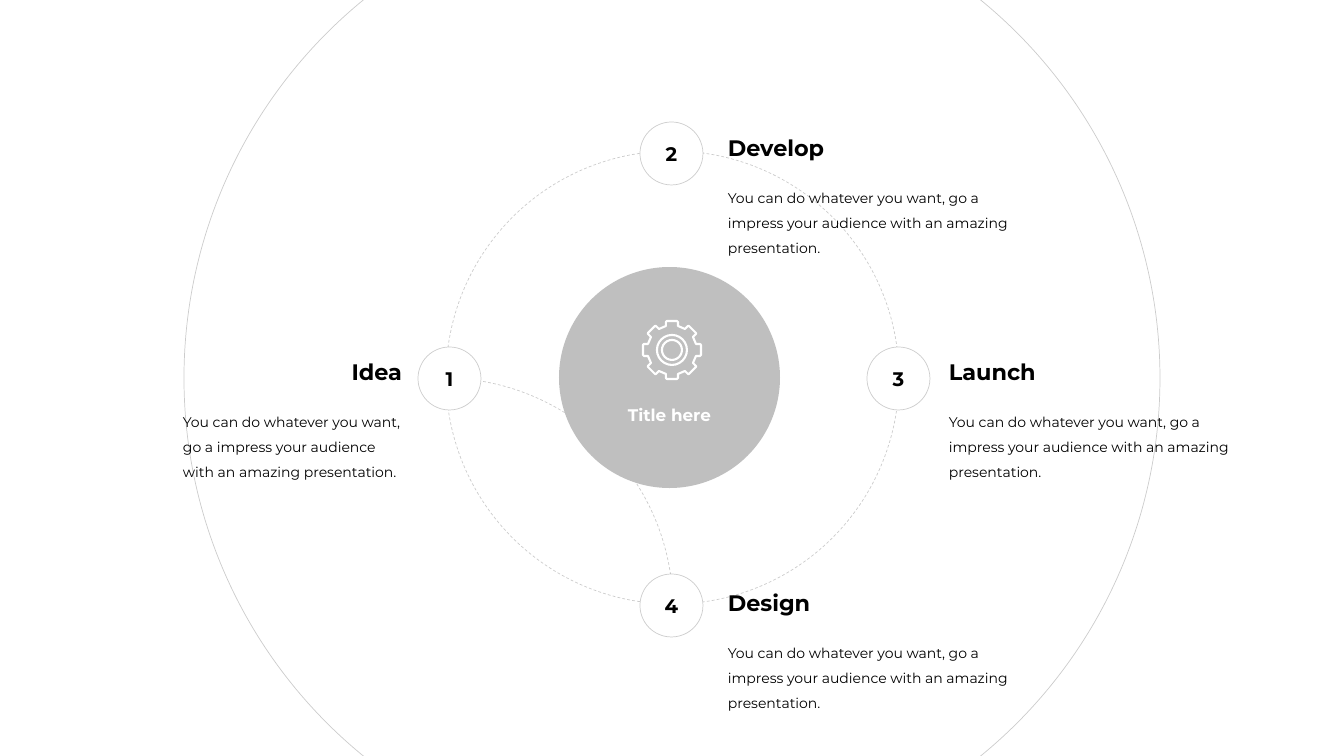
from collections import namedtuple
from dataclasses import dataclass
from math import cos, radians, sin

from lxml import etree
from pptx import Presentation
from pptx import util as u
from pptx.dml.color import RGBColor
from pptx.enum import dml, shapes, text
from pptx.oxml.ns import qn

PX = u.Inches(1) / 100.8

Box = namedtuple("Box", "left top width height")
Step = namedtuple("Step", "number heading heading_width badge words align")


@dataclass(frozen=True)
class Theme:
    font: str = "Montserrat"
    ink: RGBColor = RGBColor(0, 0, 0)
    paper: RGBColor = RGBColor(255, 255, 255)
    hub: RGBColor = RGBColor(191, 191, 191)
    line_opacity: int = 20
    hairline: float = 0.5
    icon_line: float = 1.5
    heading_size: int = 16
    number_size: int = 14
    hub_size: int = 12
    body_size: int = 10


THEME = Theme()
DESCRIPTION = ("You can do whatever you want, go a impress your audience "
               "with an amazing presentation.")
BADGE = 63
HEADING_HEIGHT = 37
BODY_DROP = 47
BODY_HEIGHT = 84
LEFT, RIGHT = text.PP_ALIGN.LEFT, text.PP_ALIGN.RIGHT

STEPS = [
    Step("2", "Develop", 98, (640, 122), (728, 129, 289), LEFT),
    Step("4", "Design", 84, (640, 574), (728, 584, 289), LEFT),
    Step("1", "Idea", 54, (418, 347), (183, 353, 219), RIGHT),
    Step("3", "Launch", 90, (867, 347), (949, 353, 289), LEFT),
]


def emu(box):
    return [u.Emu(round(length * PX)) for length in box]


def apply(target, values):
    for name, value in values.items():
        setattr(target, name, value)


def paint(shape, fill=None, line=None, width=THEME.hairline, dash=None, opacity=100):
    shape.shadow.inherit = False
    if fill is None:
        shape.fill.background()
    else:
        shape.fill.solid()
        shape.fill.fore_color.rgb = fill
    if line is None:
        shape.line.fill.background()
        return
    shape.line.color.rgb = line
    shape.line.width = u.Pt(width)
    if dash is not None:
        shape.line.dash_style = dash
    if opacity < 100:
        outline = shape._element.spPr.find(qn("a:ln"))
        for color in outline.iter(qn("a:srgbClr")):
            etree.SubElement(color, qn("a:alpha"), val=str(opacity * 1000))


def add_outline(page, kind, box, **style):
    """Add a shape with the faint hairline shared by rings and badges."""
    shape = page.shapes.add_shape(kind, *emu(box))
    paint(shape, line=THEME.ink, opacity=THEME.line_opacity, **style)
    return shape


def write(shape, words, size, color, align, bold=False, spacing=None):
    para = shape.text_frame.paragraphs[0]
    apply(para, {"alignment": align, "line_spacing": spacing})
    span = para.add_run()
    span.text = words
    apply(span.font, {"name": THEME.font, "size": u.Pt(size), "bold": bold})
    span.font.color.rgb = color


def add_label(page, box, wrap, *content, **style):
    label = page.shapes.add_textbox(*emu(box))
    apply(label.text_frame, {
        "margin_left": 0, "margin_right": 0,
        "margin_top": u.Inches(0.05), "margin_bottom": u.Inches(0.05),
        "word_wrap": wrap,
        "auto_size": text.MSO_AUTO_SIZE.SHAPE_TO_FIT_TEXT,
    })
    write(label, *content, **style)


def add_orbits(page, box):
    """Draw the lower-left arc, the large circle and the dashed ring."""
    middle_x = box.left + box.width // 2
    middle_y = box.top + box.height // 2
    dash = dml.MSO_LINE.DASH
    oval = shapes.MSO_SHAPE.OVAL
    add_outline(page, shapes.MSO_SHAPE.ARC,
                Box(middle_x - 458, middle_y, 459, 459), dash=dash)
    add_outline(page, oval, Box(middle_x - 488, middle_y - 488, 976, 976))
    add_outline(page, oval, Box(middle_x - 226, middle_y - 227, 453, 453), dash=dash)


def add_badge(page, box, number):
    badge = add_outline(page, shapes.MSO_SHAPE.OVAL, box, fill=THEME.paper)
    badge.text_frame.vertical_anchor = text.MSO_ANCHOR.MIDDLE
    write(badge, number, THEME.number_size, THEME.ink, text.PP_ALIGN.CENTER, bold=True)


def add_step_words(page, box, step):
    heading_left = box.left
    if step.align == RIGHT:
        heading_left += box.width - step.heading_width
    body = Box(box.left, box.top + BODY_DROP, box.width, BODY_HEIGHT)
    add_label(page, body, True, DESCRIPTION, THEME.body_size, THEME.ink, LEFT,
              spacing=1.5)
    heading = Box(heading_left, box.top, step.heading_width, HEADING_HEIGHT)
    add_label(page, heading, False, step.heading, THEME.heading_size, THEME.ink,
              step.align, bold=True)


def add_gear(page, box):
    """Draw an eight-tooth gear and its two inner rings."""
    middle_x = box.left + box.width / 2
    middle_y = box.top + box.height / 2
    tooth = [(-6, -24), (-6, -28), (-5, -29), (5, -29), (6, -28), (6, -24)]
    points = []
    for angle in map(radians, range(0, 360, 45)):
        points += [(middle_x + x * cos(angle) - y * sin(angle),
                    middle_y + x * sin(angle) + y * cos(angle)) for x, y in tooth]
    builder = page.shapes.build_freeform(*points[0], scale=PX)
    builder.add_line_segments(points[1:], close=True)
    parts = [builder.convert_to_shape()]
    for radius in (15, 10):
        ring = Box(middle_x - radius, middle_y - radius, 2 * radius, 2 * radius)
        parts.append(page.shapes.add_shape(shapes.MSO_SHAPE.OVAL, *emu(ring)))
    for part in parts:
        paint(part, line=THEME.paper, width=THEME.icon_line)


def add_hub(page, box):
    hub = page.shapes.add_shape(shapes.MSO_SHAPE.OVAL, *emu(box))
    paint(hub, fill=THEME.hub)
    apply(hub.text_frame, {"vertical_anchor": text.MSO_ANCHOR.MIDDLE,
                           "margin_top": u.Inches(0.79)})
    write(hub, "Title here", THEME.hub_size, THEME.paper, text.PP_ALIGN.CENTER,
          bold=True)
    add_gear(page, Box(box.left + 83, box.top + 53, 60, 60))


def main():
    deck = Presentation()
    size = Box(0, 0, 1344, 756)
    deck.slide_width, deck.slide_height = emu((size.width, size.height))
    page = deck.slides.add_slide(deck.slide_layouts[6])
    add_orbits(page, size)
    for step in STEPS:
        add_badge(page, Box(*step.badge, BADGE, BADGE), step.number)
    for step in STEPS:
        add_step_words(page, Box(*step.words, BODY_DROP + BODY_HEIGHT), step)
    add_hub(page, Box(559, 267, 221, 221))
    deck.save("out.pptx")


if __name__ == "__main__":
    main()
